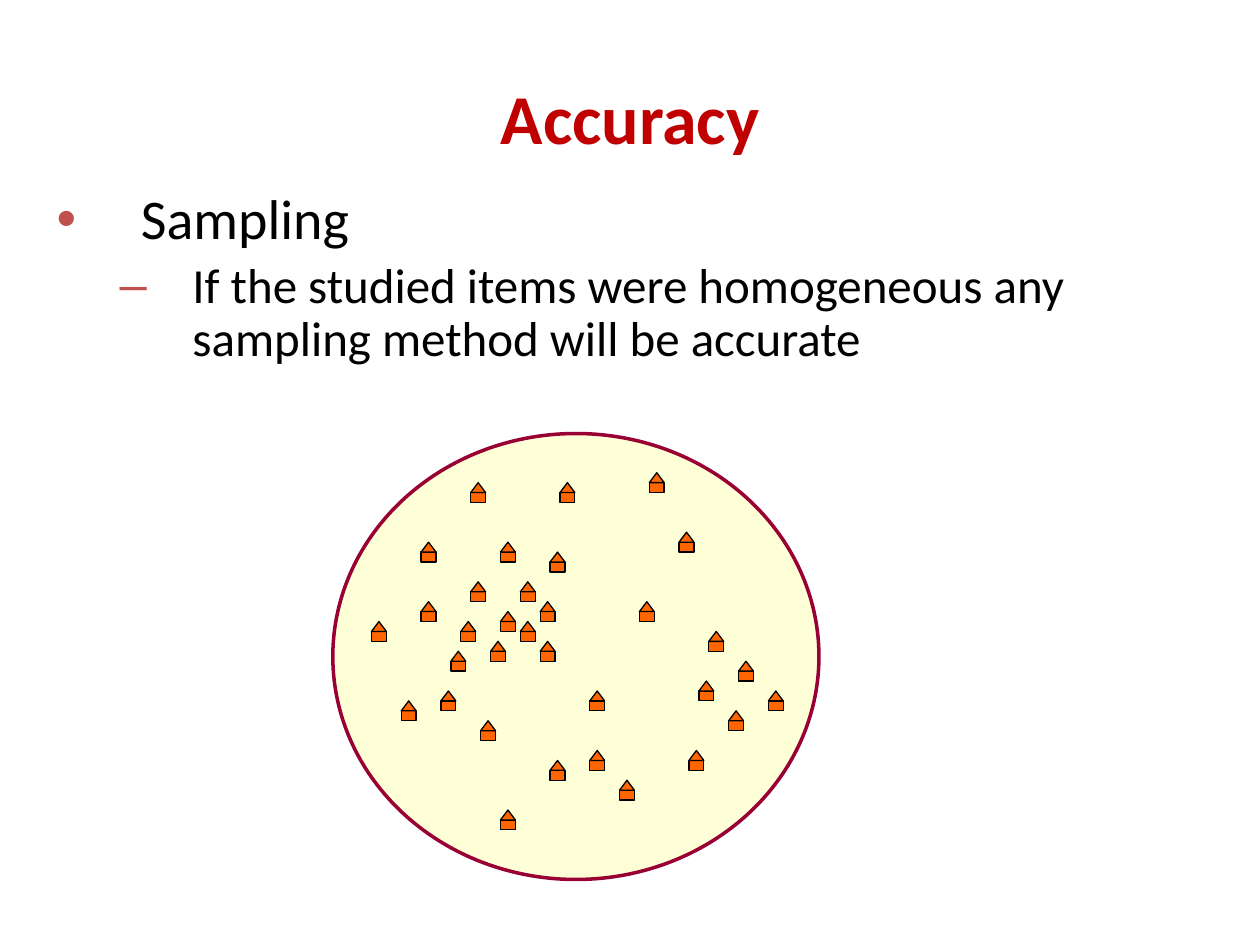
from typing import NamedTuple

from lxml import etree
from pptx import Presentation
from pptx.dml.color import RGBColor
from pptx.enum.shapes import MSO_SHAPE
from pptx.enum.text import MSO_ANCHOR, PP_ALIGN
from pptx.oxml.ns import qn
from pptx.util import Cm, Pt

OVAL, RECT, ROOF = MSO_SHAPE.OVAL, MSO_SHAPE.RECTANGLE, MSO_SHAPE.ISOSCELES_TRIANGLE
MIDDLE, CENTER = MSO_ANCHOR.MIDDLE, PP_ALIGN.CENTER
FONT = "Calibri"
STEP = 0.2  # grid pitch, also the height of a roof or wall
LEFT, TOP, WIDTH = 7.49, 9.53, 0.3


class Item(NamedTuple):
    text: str
    level: int
    size: int
    mark: str
    margin: float
    hang: float


class House(NamedTuple):
    col: int
    row: int


ITEMS = [
    Item("Sampling", 0, 32, "•", 1.7, 1.7),
    Item("If the studied items were homogeneous any sampling method will be accurate",
         1, 28, "–", 2.74, 1.47),
]

# Grid column and row of each house
HOUSES = [House(*spot) for spot in (
    (27, 13), (19, 1), (0, 15), (10, 11), (13, 14), (8, 18), (17, 17),
    (3, 23), (13, 34), (32, 28), (10, 1), (13, 7), (15, 11), (22, 22),
    (18, 8), (33, 21), (36, 24), (28, 0), (17, 13), (31, 6), (15, 15),
    (34, 16), (37, 19), (40, 22), (9, 15), (5, 13), (5, 7), (11, 25),
    (7, 22), (18, 29), (12, 17), (22, 28), (25, 31),
)]


def color(code: str) -> RGBColor:
    return RGBColor.from_string(code)


def apply(target, values: dict) -> None:
    for name, value in values.items():
        setattr(target, name, value)


def place(left: float, top: float, width: float, height: float) -> dict:
    return dict(left=Cm(left), top=Cm(top), width=Cm(width), height=Cm(height))


def style(font, size: int, code: str, bold: bool = False) -> None:
    apply(font, dict(name=FONT, size=Pt(size), bold=bold))
    font.color.rgb = color(code)


def draw(shapes, kind, box: dict, fill: str, line: str, weight: float) -> None:
    shape = shapes.add_shape(kind, **box)
    shape.shadow.inherit = False
    shape.fill.solid()
    shape.fill.fore_color.rgb = color(fill)
    shape.line.color.rgb = color(line)
    shape.line.width = Pt(weight)


def add_item(para, item: Item) -> None:
    apply(para, dict(level=item.level, line_spacing=0.9, space_before=Pt(item.size * 0.2)))
    run = para.add_run()
    run.text = item.text
    style(run.font, item.size, "000000")
    # Hanging bullet
    props = para._p.get_or_add_pPr()
    props.set("marL", str(Cm(item.margin)))
    props.set("indent", str(-Cm(item.hang)))
    tint = etree.SubElement(props, qn("a:buClr"))
    etree.SubElement(tint, qn("a:srgbClr"), val="C0504D")
    etree.SubElement(props, qn("a:buFont"), typeface="Arial")
    etree.SubElement(props, qn("a:buChar"), char=item.mark)


def add_house(shapes, house: House) -> None:
    group = shapes.add_group_shape()
    left, top = LEFT + house.col * STEP, TOP + house.row * STEP
    for kind, drop in ((RECT, STEP), (ROOF, 0)):
        draw(group.shapes, kind, place(left, top + drop, WIDTH, STEP), "FF6600", "000000", 0.75)


def main() -> None:
    deck = Presentation()
    apply(deck, dict(slide_width=Cm(25.4), slide_height=Cm(19.05)))
    slide = deck.slides.add_slide(deck.slide_layouts[5])
    shapes = slide.shapes

    # Title
    title = shapes.title
    apply(title, place(1.27, 1.37, 22.86, 1.96))
    title.text_frame.text = "Accuracy"
    title.text_frame.vertical_anchor = MIDDLE
    para = title.text_frame.paragraphs[0]
    para.alignment = CENTER
    style(para.runs[0].font, 40, "C00000", True)

    # Bulleted text
    frame = shapes.add_textbox(**place(0.89, 3.73, 24.51, 4.19)).text_frame
    frame.word_wrap = True
    for index, item in enumerate(ITEMS):
        add_item(frame.add_paragraph() if index else frame.paragraphs[0], item)

    # Population and its houses
    draw(shapes, OVAL, place(6.71, 8.74, 9.8, 8.99), "FFFFD7", "990033", 2)
    for house in HOUSES:
        add_house(shapes, house)

    deck.save("out.pptx")


if __name__ == "__main__":
    main()
